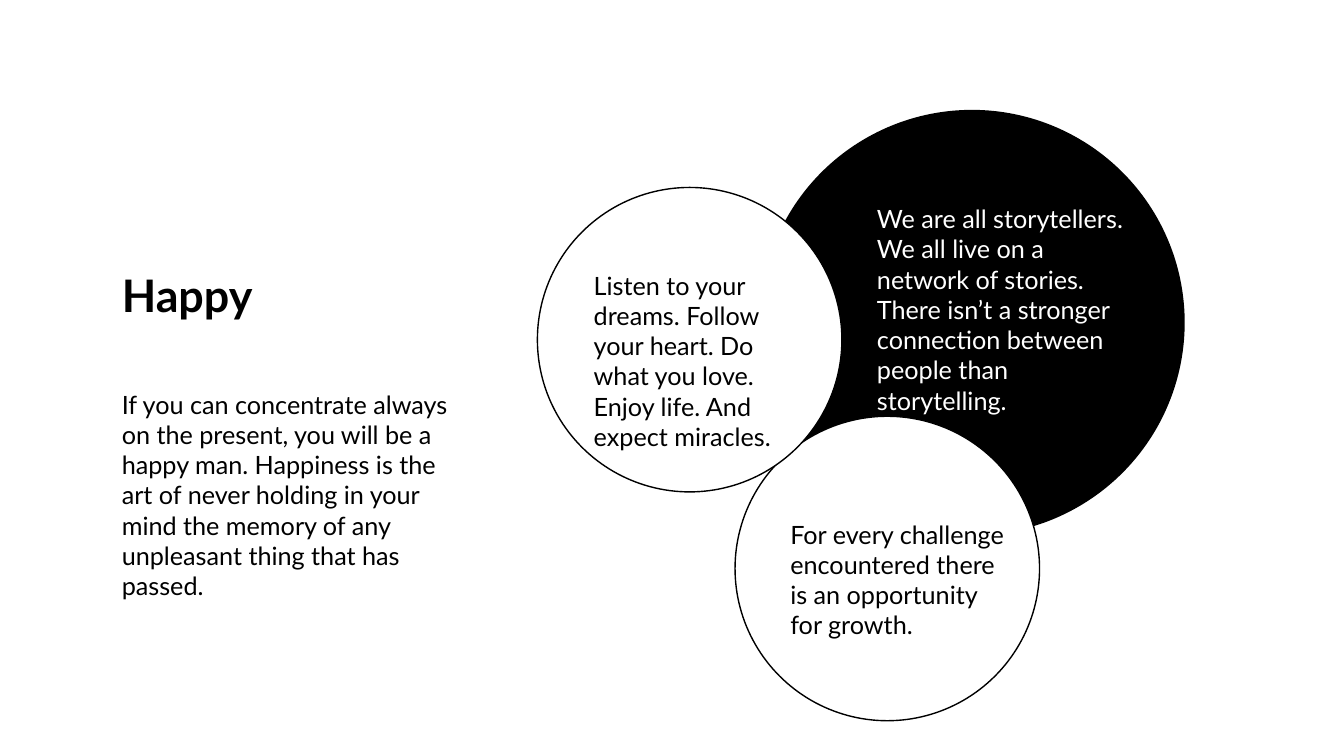
from dataclasses import dataclass
from typing import Optional

from pptx import Presentation
from pptx.dml.color import RGBColor
from pptx.enum.shapes import MSO_SHAPE
from pptx.enum.text import MSO_AUTO_SIZE
from pptx.util import Inches, Pt

BLACK = "000000"
WHITE = "FFFFFF"
FONT = "Lato"


@dataclass
class Disc:
    left: float
    top: float
    size: float
    fill: str
    line: Optional[str] = None


@dataclass
class Note:
    text: str
    left: float
    top: float
    width: float
    height: float
    size: int = 18
    color: str = BLACK
    bold: bool = False


# Circles, from back to front
DISCS = [
    Disc(7.53, 1.09, 4.22, BLACK),
    Disc(7.29, 4.13, 3.02, WHITE, BLACK),
    Disc(5.33, 1.86, 3.02, WHITE, BLACK),
]

# Body and title on the left, then one note per circle
NOTES = [
    Note("If you can concentrate always on the present, you will be a happy man. "
         "Happiness is the art of never holding in your mind the memory of any "
         "unpleasant thing that has passed.", 1.11, 3.81, 3.47, 1.92),
    Note("Happy", 1.11, 2.61, 1.76, 0.64, size=32, bold=True),
    Note("We are all storytellers. We all live on a network of stories. "
         "There isn’t a stronger connection between people than storytelling.",
         8.6, 1.97, 2.83, 1.92, color=WHITE),
    Note("Listen to your dreams. Follow your heart. Do what you love. "
         "Enjoy life. And expect miracles.", 5.79, 2.63, 2.31, 1.62),
    Note("For every challenge encountered there is an opportunity for growth.",
         7.74, 5.1, 2.33, 1.31),
]


def rgb(code: str) -> RGBColor:
    return RGBColor.from_string(code)


def put_text(frame, text: str, *, size: int, color: str, bold: bool) -> None:
    frame.word_wrap = True
    frame.auto_size = MSO_AUTO_SIZE.SHAPE_TO_FIT_TEXT
    run = frame.paragraphs[0].add_run()
    run.text = text
    run.font.name = FONT
    run.font.size = Pt(size)
    run.font.bold = bold
    run.font.color.rgb = rgb(color)


def draw_disc(slide, disc: Disc) -> None:
    side = Inches(disc.size)
    shape = slide.shapes.add_shape(
        MSO_SHAPE.OVAL, Inches(disc.left), Inches(disc.top), side, side)
    shape.shadow.inherit = False
    shape.fill.solid()
    shape.fill.fore_color.rgb = rgb(disc.fill)
    if disc.line:
        shape.line.color.rgb = rgb(disc.line)
        shape.line.width = Pt(1)
    else:
        shape.line.fill.background()


def draw_note(slide, note: Note) -> None:
    box = slide.shapes.add_textbox(
        Inches(note.left), Inches(note.top), Inches(note.width), Inches(note.height))
    put_text(box.text_frame, note.text,
             size=note.size, color=note.color, bold=note.bold)


def main() -> None:
    deck = Presentation()
    deck.slide_width = Inches(13.33)
    deck.slide_height = Inches(7.5)
    slide = deck.slides.add_slide(deck.slide_layouts[6])
    for disc in DISCS:
        draw_disc(slide, disc)
    for note in NOTES:
        draw_note(slide, note)
    deck.save("out.pptx")


if __name__ == "__main__":
    main()
